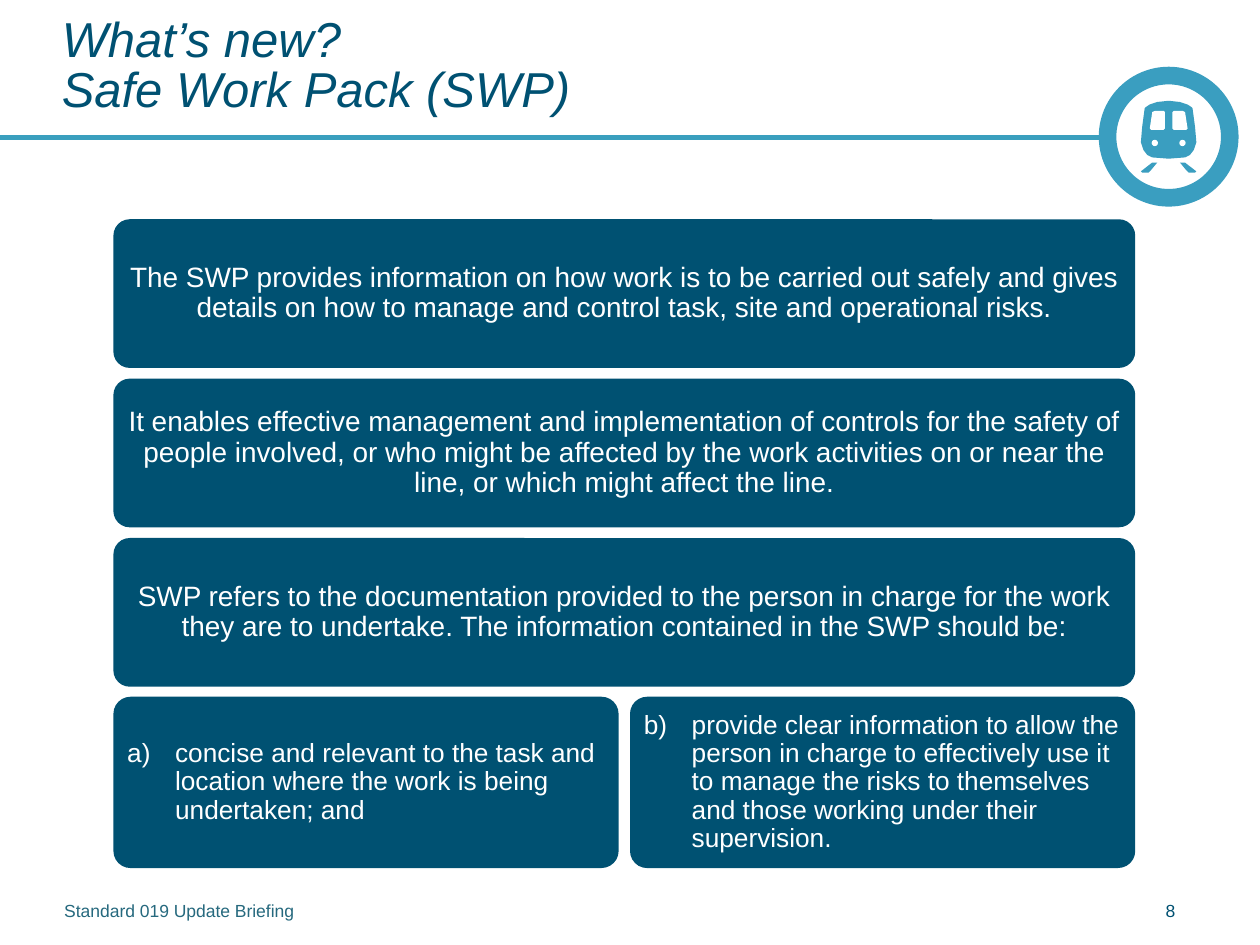
import pptx
import pptx.dml.color
import pptx.enum.shapes
import pptx.enum.text
import pptx.oxml
import pptx.oxml.ns
import pptx.util

Inches = pptx.util.Inches
SHAPE = pptx.enum.shapes.MSO_SHAPE
ANCHOR = pptx.enum.text.MSO_ANCHOR
ALIGN = pptx.enum.text.PP_ALIGN
NAVY, TEAL, WHITE = "005172", "3A9EC0", "FFFFFF"


def paint(colour_format, hex_colour):
    colour_format.rgb = pptx.dml.color.RGBColor.from_string(hex_colour)


def write(shape, text, size, colour, inset=0, anchor=ANCHOR.TOP,
          align=ALIGN.LEFT, spacing=1.0, italic=False):
    frame = shape.text_frame
    paragraph = frame.paragraphs[0]
    paragraph.text = text
    margins = dict.fromkeys(
        ["margin_left", "margin_top", "margin_right", "margin_bottom"], Inches(inset))
    formats = [
        (frame, {"word_wrap": True, "vertical_anchor": anchor, **margins}),
        (paragraph, {"alignment": align, "line_spacing": spacing}),
    ]
    for run in paragraph.runs:
        formats.append((run.font, {"name": "Arial", "size": pptx.util.Pt(size),
                                   "italic": italic}))
        paint(run.font.color, colour)
    for target, values in formats:
        for name, value in values.items():
            setattr(target, name, value)
    return paragraph


deck = pptx.Presentation()
deck.slide_width, deck.slide_height = Inches(10), Inches(7.5)
slide = deck.slides.add_slide(deck.slide_layouts[6])
shapes = slide.shapes
filled = []  # (shape, fill colour)

# Header rule
rule = shapes.add_connector(pptx.enum.shapes.MSO_CONNECTOR.STRAIGHT,
                            Inches(0), Inches(1.09), Inches(8.78), Inches(1.09))
paint(rule.line.color, "3A9FBE")
rule.line.width = pptx.util.Pt(3)
rule._element.spPr.append(pptx.oxml.parse_xml(
    f"<a:effectLst {pptx.oxml.ns.nsdecls('a')}/>"))

# Train badge: ring, then the train, mirrored about its centre line
badge_x = 9.275
ring = shapes.add_shape(SHAPE.DONUT, Inches(8.72), Inches(0.53), Inches(1.11), Inches(1.11))
ring.adjustments[0] = 0.126
filled.append((ring, TEAL))

# Half outlines as (distance from centre line, y)
body = [(0, 0.8), (0.09, 0.81), (0.15, 0.83), (0.18, 0.85), (0.19, 0.86), (0.21, 1.01),
        (0.22, 1.13), (0.2, 1.19), (0.17, 1.23), (0.13, 1.25), (0, 1.26)]
rail = [(0.09, 1.29), (0.13, 1.29), (0.22, 1.36), (0.21, 1.37), (0.16, 1.37), (0.14, 1.35)]
window = [(0.04, 0.88), (0.11, 0.88), (0.13, 0.89), (0.15, 1.02), (0.14, 1.03),
          (0.04, 1.03), (0.03, 1.02), (0.03, 0.89)]
outlines = [([(badge_x + x, y) for x, y in body]
             + [(badge_x - x, y) for x, y in reversed(body)], TEAL)]
for part, colour in [(rail, TEAL), (window, WHITE)]:
    for side in (-1, 1):
        outlines.append(([(badge_x + side * x, y) for x, y in part], colour))
for outline, colour in outlines:
    points = [(Inches(x), Inches(y)) for x, y in outline]
    builder = shapes.build_freeform(*points[0])
    builder.add_line_segments(points[1:], close=True)
    filled.append((builder.convert_to_shape(), colour))
for side in (-1, 1):
    headlight = shapes.add_shape(SHAPE.OVAL, Inches(badge_x + side * 0.11 - 0.025),
                                 Inches(1.11), Inches(0.05), Inches(0.05))
    filled.append((headlight, WHITE))

# Title
title = shapes.add_textbox(Inches(0.49), Inches(0.19), Inches(7.92), Inches(0.7))
write(title, "What’s new?\vSafe Work Pack (SWP)", 28, NAVY,
      anchor=ANCHOR.MIDDLE, spacing=0.85, italic=True)

# Footer
for left, width, text, colour in [
    (9.25, 0.49, "8", NAVY),
    (0.51, 8.65, "Standard 019 Update Briefing", "26697E"),
]:
    footer = shapes.add_textbox(Inches(left), Inches(7.14), Inches(width), Inches(0.24))
    write(footer, text, 10, colour)

# Full-width statements
statements = [
    "The SWP provides information on how work is to be carried out safely and gives "
    "details on how to manage and control task, site and operational risks.",
    "It enables effective management and implementation of controls for the safety of "
    "people involved, or who might be affected by the work activities on or near the "
    "line, or which might affect the line.",
    "SWP refers to the documentation provided to the person in charge for the work they "
    "are to undertake. The information contained in the SWP should be:",
]
for row, text in enumerate(statements):
    statement = shapes.add_shape(SHAPE.ROUNDED_RECTANGLE, Inches(0.9),
                                 Inches(1.74 + row * 1.265), Inches(8.11), Inches(1.18))
    statement.adjustments[0] = 0.11
    write(statement, text, 16, WHITE, 0.08, ANCHOR.MIDDLE, ALIGN.CENTER, 0.9)
    filled.append((statement, NAVY))

# Lettered requirements
requirements = [
    "concise and relevant to the task and location where the work is being "
    "undertaken; and",
    "provide clear information to allow the person in charge to effectively use it to "
    "manage the risks to themselves and those working under their supervision.",
]
for column, text in enumerate(requirements):
    requirement = shapes.add_shape(SHAPE.ROUNDED_RECTANGLE, Inches(0.9 + column * 4.1),
                                   Inches(5.53), Inches(4.01), Inches(1.36))
    requirement.adjustments[0] = 0.1
    paragraph = write(requirement, text, 15, WHITE, 0.07, ANCHOR.MIDDLE, spacing=0.9)
    properties = paragraph._p.get_or_add_pPr()
    properties.set("marL", str(Inches(0.38)))
    properties.set("indent", str(-Inches(0.38)))
    properties.append(pptx.oxml.parse_xml(
        f"<a:buAutoNum {pptx.oxml.ns.nsdecls('a')} type='alphaLcParenR' "
        f"startAt='{column + 1}'/>"))
    filled.append((requirement, NAVY))

# Plain fills without outline or shadow
for shape, colour in filled:
    shape.fill.solid()
    paint(shape.fill.fore_color, colour)
    shape.line.fill.background()
    shape.shadow.inherit = False

deck.save("out.pptx")
